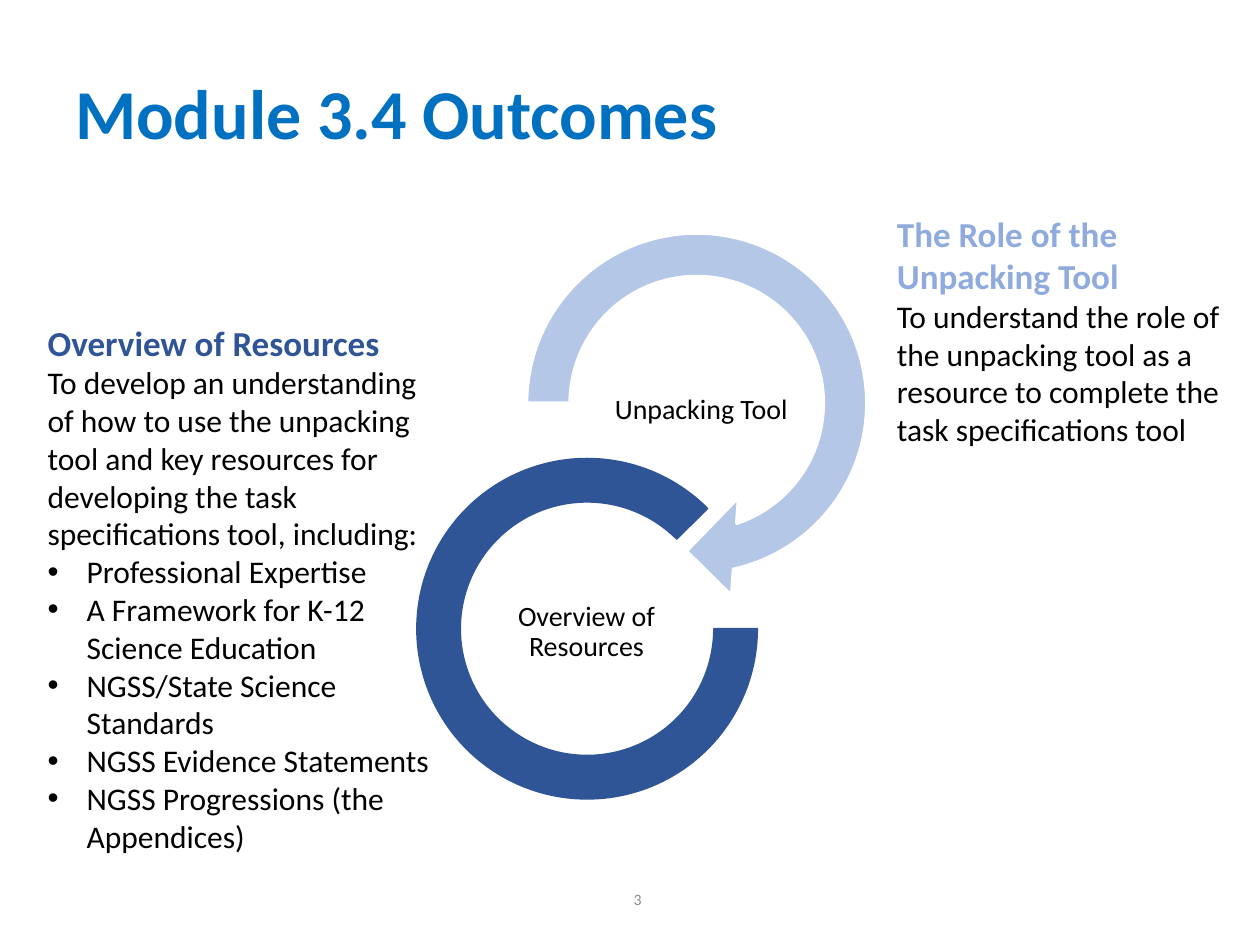
"""Build the Module 3.4 Outcomes slide."""
import pptx
import pptx.dml.color
import pptx.enum.shapes
import pptx.enum.text
import pptx.oxml.ns
import pptx.util
from lxml import etree

Inches = pptx.util.Inches
RGBColor = pptx.dml.color.RGBColor
Align = pptx.enum.text.PP_ALIGN
Anchor = pptx.enum.text.MSO_ANCHOR
Preset = pptx.enum.shapes.MSO_SHAPE

TITLE_BLUE = RGBColor(0x00, 0x70, 0xC0)
DARK_BLUE = RGBColor(0x2F, 0x55, 0x97)
MEDIUM_BLUE = RGBColor(0x8F, 0xAA, 0xDC)
PALE_BLUE = RGBColor(0xB4, 0xC7, 0xE7)
GRAY = RGBColor(0x8C, 0x8C, 0x8C)
BLACK = RGBColor(0, 0, 0)
WHITE = RGBColor(0xFF, 0xFF, 0xFF)

RESOURCES = [
    "Professional Expertise",
    "A Framework for K-12 Science Education",
    "NGSS/State Science Standards",
    "NGSS Evidence Statements",
    "NGSS Progressions (the Appendices)",
]


class SlideBuilder:
    font_name = "Calibri"
    heading_size = 20
    body_size = 18
    bullet_indent = Inches(0.31)

    def __init__(self, slide):
        self.slide = slide

    def add_frame(self, box, anchor=Anchor.TOP):
        shape = self.slide.shapes.add_textbox(*map(Inches, box))
        text_frame = shape.text_frame
        text_frame.word_wrap = True
        text_frame.vertical_anchor = anchor
        return text_frame

    def format_runs(self, paragraph, size, color, bold=False):
        for run in paragraph.runs:
            run.font.name = self.font_name
            run.font.size = pptx.util.Pt(size)
            run.font.bold = bold
            run.font.color.rgb = color

    def add_label(self, box, text, size, color, alignment=Align.LEFT, bold=False, margin=None):
        text_frame = self.add_frame(box, Anchor.MIDDLE)
        if margin is not None:
            text_frame.margin_left = text_frame.margin_right = Inches(margin)
            text_frame.margin_top = text_frame.margin_bottom = Inches(margin)
        text_frame.text = text
        paragraph = text_frame.paragraphs[0]
        paragraph.alignment = alignment
        paragraph.line_spacing = 0.9
        self.format_runs(paragraph, size, color, bold)

    def add_ring(self, preset, box, adjustments, fill, line, line_width):
        shape = self.slide.shapes.add_shape(preset, *map(Inches, box))
        shape.shadow.inherit = False
        for index, value in enumerate(adjustments):
            shape.adjustments[index] = value
        shape.fill.solid()
        shape.fill.fore_color.rgb = fill
        shape.line.color.rgb = line
        shape.line.width = pptx.util.Pt(line_width)

    def add_bullet(self, paragraph):
        properties = paragraph._p.get_or_add_pPr()
        properties.set("marL", str(self.bullet_indent))
        properties.set("indent", str(-self.bullet_indent))
        font = etree.SubElement(properties, pptx.oxml.ns.qn("a:buFont"))
        font.set("typeface", "Arial")
        bullet = etree.SubElement(properties, pptx.oxml.ns.qn("a:buChar"))
        bullet.set("char", "•")

    def add_outcome(self, box, heading, heading_color, description, bullets=()):
        text_frame = self.add_frame(box)
        text_frame.text = "\n".join([heading, description, *bullets])
        heading_paragraph, description_paragraph, *bullet_paragraphs = text_frame.paragraphs
        self.format_runs(heading_paragraph, self.heading_size, heading_color, bold=True)
        self.format_runs(description_paragraph, self.body_size, BLACK)
        for paragraph in bullet_paragraphs:
            self.add_bullet(paragraph)
            self.format_runs(paragraph, self.body_size, BLACK)


def main():
    presentation = pptx.Presentation()
    presentation.slide_width = Inches(10)
    presentation.slide_height = Inches(7.5)
    builder = SlideBuilder(presentation.slides.add_slide(presentation.slide_layouts[6]))

    builder.add_label((2.94, 6.95, 2.25, 0.4), "3", 9, GRAY, Align.RIGHT)
    builder.add_label((0.5, 0.3, 9, 1.25), "Module 3.4 Outcomes", 40, TITLE_BLUE, bold=True)

    builder.add_ring(Preset.CIRCULAR_ARROW, (3.96, 1.63, 3.14, 3.14),
                     (0.11, 11.42, 45, 108, 0.125), PALE_BLUE, WHITE, 2)
    builder.add_label((4.69, 2.82, 1.75, 0.88), "Unpacking Tool", 16, BLACK, Align.CENTER, margin=0.01)
    builder.add_ring(Preset.BLOCK_ARC, (3.31, 3.64, 2.7, 2.7),
                     (0, 189, 0.127), DARK_BLUE, DARK_BLUE, 1)
    builder.add_label((3.78, 4.58, 1.75, 0.88), "Overview of Resources", 16, BLACK, Align.CENTER, margin=0.01)

    builder.add_outcome(
        (7.02, 1.64, 3.11, 1.99), "The Role of the Unpacking Tool", MEDIUM_BLUE,
        "To understand the role of the unpacking tool as a resource "
        "to complete the task specifications tool")
    builder.add_outcome(
        (0.28, 2.5, 3.3, 4.38), "Overview of Resources", DARK_BLUE,
        "To develop an understanding of how to use the unpacking tool and key "
        "resources for developing the task specifications tool, including:", RESOURCES)

    presentation.save("out.pptx")


if __name__ == "__main__":
    main()
